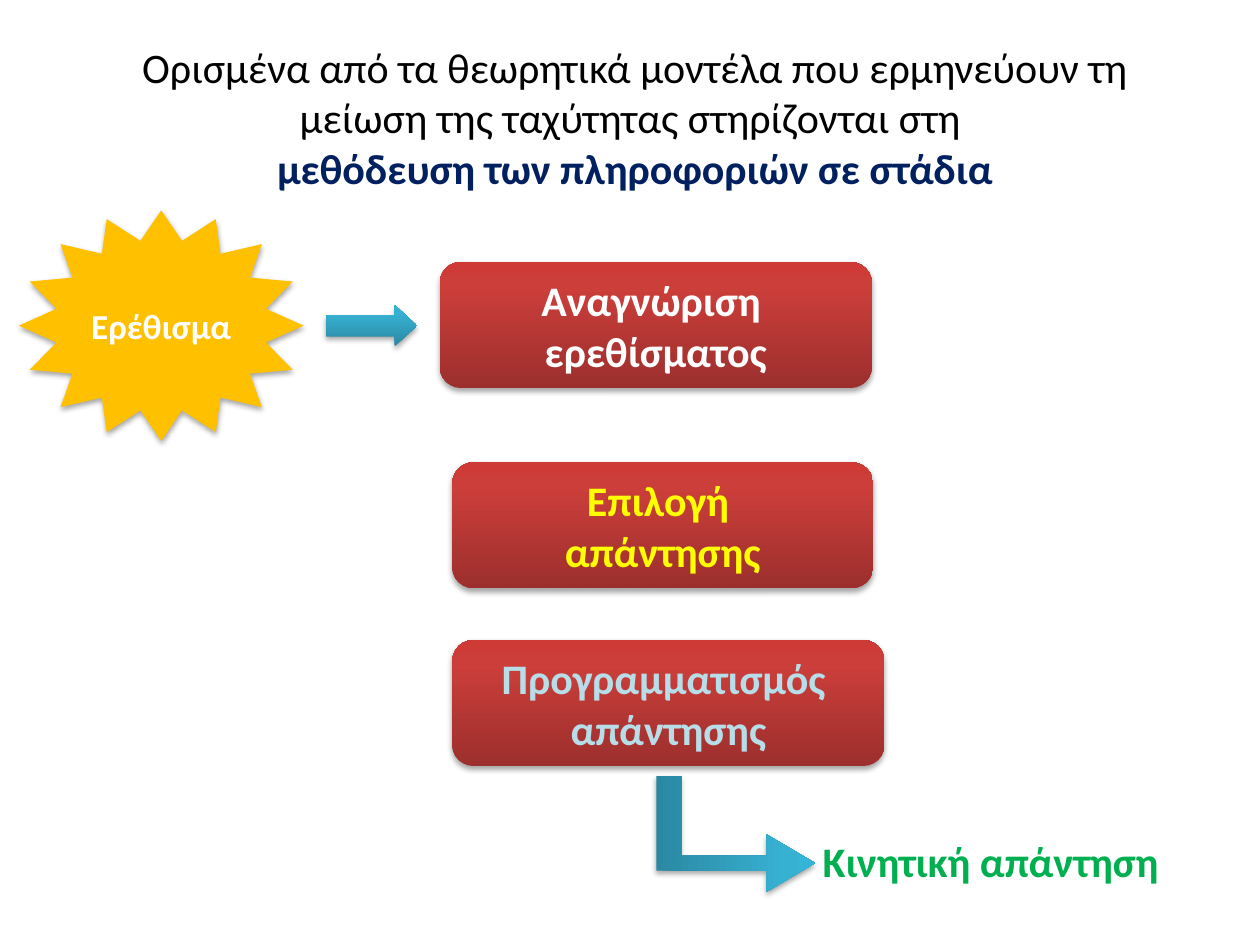
"""Build the slide on stage models of information processing and response speed."""
from copy import deepcopy

from lxml import etree
from pptx import Presentation
from pptx.dml.color import RGBColor
from pptx.enum.shapes import MSO_SHAPE
from pptx.enum.text import MSO_ANCHOR, MSO_AUTO_SIZE, PP_ALIGN
from pptx.oxml.ns import qn
from pptx.util import Inches, Pt

ROUNDED = MSO_SHAPE.ROUNDED_RECTANGLE
ARROW = MSO_SHAPE.RIGHT_ARROW
STAR = MSO_SHAPE.STAR_16_POINT
MIDDLE = MSO_ANCHOR.MIDDLE
CENTER = PP_ALIGN.CENTER
LEFT = PP_ALIGN.LEFT
GROW = MSO_AUTO_SIZE.SHAPE_TO_FIT_TEXT

BLACK = RGBColor(0x00, 0x00, 0x00)
WHITE = RGBColor(0xFF, 0xFF, 0xFF)
YELLOW = RGBColor(0xFF, 0xFF, 0x00)
PALE_BLUE = RGBColor(0xB7, 0xDE, 0xE8)
NAVY = RGBColor(0x00, 0x20, 0x60)
GREEN = RGBColor(0x00, 0xB0, 0x50)
AMBER = RGBColor(0xFF, 0xC0, 0x00)
REDS = (RGBColor(0x9C, 0x2F, 0x2D), RGBColor(0xCB, 0x3E, 0x3A), RGBColor(0xCE, 0x3B, 0x37))
TEALS = (RGBColor(0x2A, 0x88, 0xA2), RGBColor(0x37, 0xB1, 0xD2), RGBColor(0x34, 0xB4, 0xD6))
STOPS = (0, 0.8, 1)


def write(tf, lines, size=24, align=CENTER, wrap=False):
    tf.word_wrap = wrap
    for i, (text, color, bold) in enumerate(lines):
        p = tf.add_paragraph() if i else tf.paragraphs[0]
        p.alignment = align
        r = p.add_run()
        r.text = text
        r.font.name = "Calibri"
        r.font.size = Pt(size)
        r.font.bold = bold
        r.font.color.rgb = color


class Deck:
    def __init__(self, prs):
        self.s = prs.slides.add_slide(prs.slide_layouts[6])

    def finish(self, sp, fill):
        sp.line.fill.background()
        if isinstance(fill, RGBColor):
            sp.fill.solid()
            sp.fill.fore_color.rgb = fill
        else:
            sp.fill.gradient()
            sp.fill.gradient_angle = 90
            stops = sp.element.spPr.find(".//" + qn("a:gsLst"))
            stops.append(deepcopy(stops[-1]))
            for stop, position, color in zip(sp.fill.gradient_stops, STOPS, fill):
                stop.position = position
                stop.color.rgb = color
        sp.shadow.inherit = False
        effects = sp.element.spPr.find(qn("a:effectLst"))
        shadow = etree.SubElement(effects, qn("a:outerShdw"), blurRad="40000",
                                  dist="23000", dir="5400000", rotWithShape="0")
        color = etree.SubElement(shadow, qn("a:srgbClr"), val="000000")
        etree.SubElement(color, qn("a:alpha"), val="35000")

    def shape(self, kind, box, fill, lines=(), size=24, adjust=()):
        sp = self.s.shapes.add_shape(kind, *map(Inches, box))
        for i, value in enumerate(adjust):
            sp.adjustments[i] = value
        self.finish(sp, fill)
        if lines:
            sp.text_frame.vertical_anchor = MIDDLE
            write(sp.text_frame, lines, size)

    def freeform(self, left, top, points, fill, rotation):
        start, *rest = [(Inches(left + x), Inches(top + y)) for x, y in points]
        builder = self.s.shapes.build_freeform(*start)
        builder.add_line_segments(rest)
        sp = builder.convert_to_shape()
        sp.rotation = rotation
        self.finish(sp, fill)

    def text(self, box, lines, align=CENTER, wrap=False):
        tf = self.s.shapes.add_textbox(*map(Inches, box)).text_frame
        write(tf, lines, align=align, wrap=wrap)
        tf.auto_size = GROW


def main():
    prs = Presentation()
    prs.slide_width, prs.slide_height = Inches(10), Inches(7.5)
    deck = Deck(prs)

    stages = [
        (3.49, 2.08, 3.43, WHITE, ("Αναγνώριση ", "ερεθίσματος")),
        (3.59, 3.67, 3.34, YELLOW, ("Επιλογή ", "απάντησης")),
        (3.59, 5.08, 3.43, PALE_BLUE, ("Προγραμματισμός ", "απάντησης")),
    ]
    for left, top, width, color, words in stages:
        deck.shape(ROUNDED, (left, top, width, 1), REDS, [(w, color, True) for w in words])

    deck.shape(ARROW, (2.59, 2.42, 0.72, 0.33), TEALS, adjust=(0.5, 0.54))
    bent_arrow = [(0.69, 0), (0.46, 0.39), (0.63, 0.39), (0.63, 1.06), (0, 1.06),
                  (0, 1.26), (0.75, 1.26), (0.75, 0.39), (0.92, 0.39)]
    deck.freeform(5.38, 5.99, bent_arrow, TEALS, rotation=90)
    deck.text((6.43, 6.58, 2.89, 0.5), [("Κινητική απάντηση", GREEN, True)], align=LEFT)
    deck.shape(STAR, (0.15, 1.67, 2.26, 1.83), AMBER, [("Ερέθισμα", WHITE, True)], size=20)
    deck.text((0.51, 0.28, 9.06, 1.31), [
        ("Ορισμένα από τα θεωρητικά μοντέλα που ερμηνεύουν τη μείωση της ταχύτητας "
         "στηρίζονται στη ", BLACK, False),
        ("μεθόδευση των πληροφοριών σε στάδια", NAVY, True),
    ], wrap=True)

    prs.save("out.pptx")


if __name__ == "__main__":
    main()
